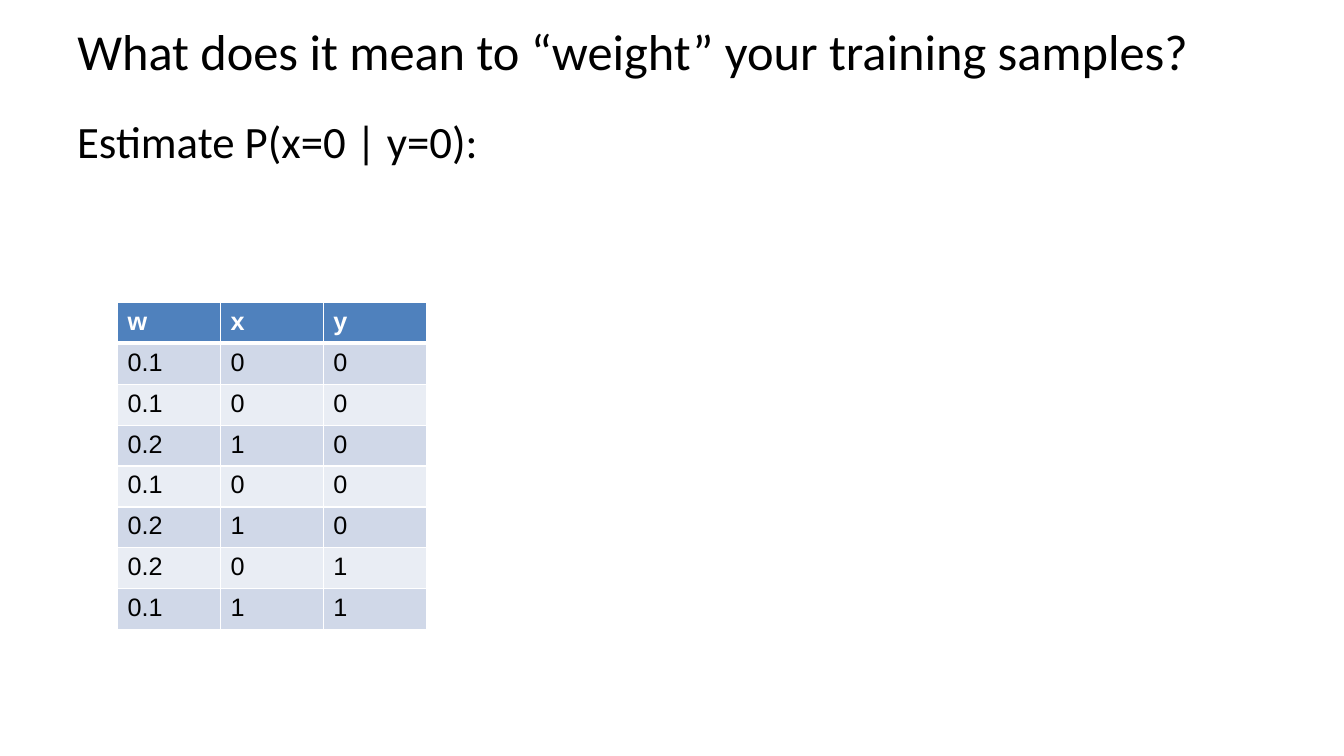
"""Build a slide on weighting training samples, with a table of weighted data."""
from dataclasses import dataclass

from lxml.etree import SubElement
from pptx import Presentation
from pptx.dml.color import RGBColor
from pptx.enum.text import MSO_ANCHOR as Anchor, MSO_AUTO_SIZE as AutoSize, PP_ALIGN as Align
from pptx.oxml.ns import qn
from pptx.util import Pt

EMU_PER_PX = 9525
TITLE_ONLY = 5


def px(n):
    return n * EMU_PER_PX


@dataclass(frozen=True)
class Theme:
    heading_font: str = "Calibri"
    table_font: str = "Arial"
    text: str = "000000"
    white: str = "FFFFFF"
    header: str = "4F81BD"
    bands: tuple = ("D0D8E8", "E9EDF4")
    title_size: int = 36
    body_size: int = 32
    table_size: int = 18


def write(tf, text, *, font, size, color, bold=False, anchor=Anchor.TOP):
    tf.word_wrap = True
    tf.vertical_anchor = anchor
    p = tf.paragraphs[0]
    p.alignment = Align.LEFT
    r = p.add_run()
    r.text = text
    r.font.name = font
    r.font.size = Pt(size)
    r.font.bold = bold
    r.font.color.rgb = RGBColor.from_string(color)


class Deck:
    def __init__(self, theme):
        self.theme = theme
        self.prs = Presentation()
        self.prs.slide_width, self.prs.slide_height = px(1280), px(720)
        self.s = self.prs.slides.add_slide(self.prs.slide_layouts[TITLE_ONLY])

    def title(self, text, x, y, w, h):
        sp = self.s.shapes.title
        sp.left, sp.top, sp.width, sp.height = map(px, (x, y, w, h))
        sp.text_frame.auto_size = AutoSize.NONE
        write(sp.text_frame, text, font=self.theme.heading_font, size=self.theme.title_size,
              color=self.theme.text, anchor=Anchor.MIDDLE)

    def body(self, text, x, y, w, h):
        sp = self.s.shapes.add_textbox(*map(px, (x, y, w, h)))
        write(sp.text_frame, text, font=self.theme.heading_font, size=self.theme.body_size,
              color=self.theme.text)

    def borders(self, cell, **widths):
        tc_pr = cell._tc.get_or_add_tcPr()
        for side, width in widths.items():
            ln = SubElement(tc_pr, qn(f"a:ln{side}"), w=str(Pt(width)))
            fill = SubElement(ln, qn("a:solidFill"))
            SubElement(fill, qn("a:srgbClr"), val=self.theme.white)

    def table(self, rows, x, y, col_w, row_h):
        t = self.theme
        n_rows, n_cols = len(rows), len(rows[0])
        frame = self.s.shapes.add_table(n_rows, n_cols, px(x), px(y),
                                        px(col_w * n_cols), px(row_h * n_rows))
        for i, row in enumerate(rows):
            head = i == 0
            for j, text in enumerate(row):
                cell = frame.table.cell(i, j)
                self.borders(cell, L=1, R=1, T=3 if i == 1 else 1, B=3 if head else 1)
                cell.fill.solid()
                color = t.header if head else t.bands[(i - 1) % 2]
                cell.fill.fore_color.rgb = RGBColor.from_string(color)
                write(cell.text_frame, text, font=t.table_font, size=t.table_size,
                      color=t.white if head else t.text, bold=head)

    def save(self):
        self.prs.save("out.pptx")


def main():
    deck = Deck(Theme())
    deck.title("What does it mean to “weight” your training samples?", 64, 0, 1152, 96)
    deck.body("Estimate P(x=0 | y=0):", 64, 104, 1208, 120)
    samples = [
        ("w", "x", "y"),
        ("0.1", "0", "0"),
        ("0.1", "0", "0"),
        ("0.2", "1", "0"),
        ("0.1", "0", "0"),
        ("0.2", "1", "0"),
        ("0.2", "0", "1"),
        ("0.1", "1", "1"),
    ]
    deck.table(samples, 112, 288, 98, 39)
    deck.save()


if __name__ == "__main__":
    main()
